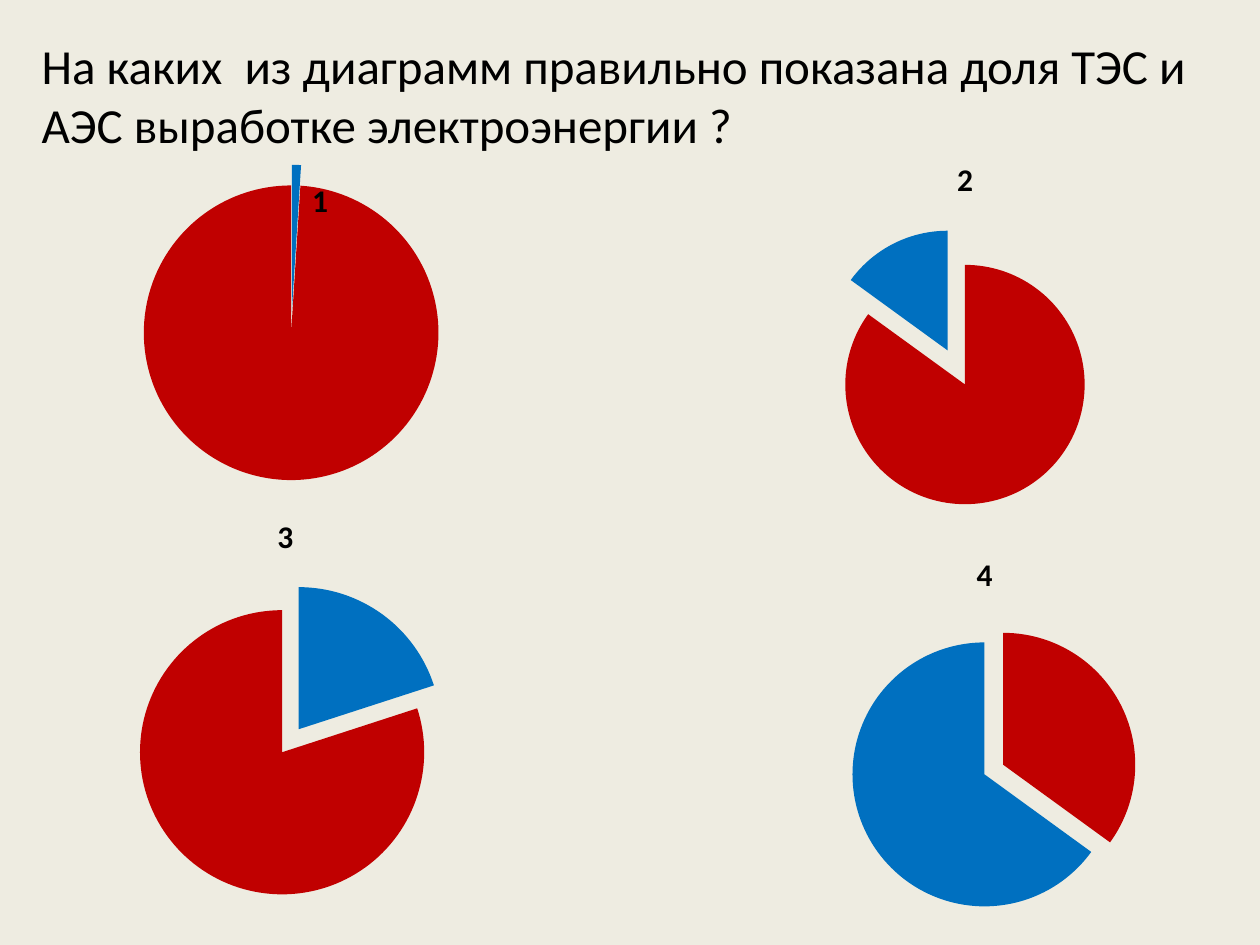
from lxml import etree
from pptx import Presentation
from pptx.chart.data import CategoryChartData
from pptx.dml.color import RGBColor
from pptx.enum.chart import XL_CHART_TYPE
from pptx.enum.text import MSO_ANCHOR, MSO_AUTO_SIZE, PP_ALIGN
from pptx.oxml.ns import qn
from pptx.util import Emu, Pt

PIE = XL_CHART_TYPE.PIE
TOP, LEFT, GROW = MSO_ANCHOR.TOP, PP_ALIGN.LEFT, MSO_AUTO_SIZE.SHAPE_TO_FIT_TEXT
SCALE = 914400 / 126  # EMU per px


class Theme:
    font = "Calibri"
    back = RGBColor.from_string("EEECE1")
    ink = RGBColor.from_string("000000")
    blue = RGBColor.from_string("0070C0")
    red = RGBColor.from_string("C00000")
    head = Pt(28)
    label = Pt(18)


TITLE = "На каких  из диаграмм правильно показана доля ТЭС и АЭС выработке электроэнергии ?"
CATS = ["1", "2", "3", "4"]

# Each pie: title, series name, frame in px, slices (value, colour, explosion %)
PIES = [
    ("1", "Series 1", (0, 158, 640, 393),
     [(1, Theme.blue, 14), (99, Theme.red, 0)]),
    ("2", "2", (591, 137, 748, 423),
     [(85, Theme.red, 0), (15, Theme.blue, 32)]),
    ("3", "Series 1", (-49, 493, 669, 437),
     [(20, Theme.blue, 16), (80, Theme.red, 4)]),
    ("4", "Series 1", (709, 532, 551, 413),
     [(35, Theme.red, 16), (65, Theme.blue, 0)]),
]
# Fixed inner plot area, as shares of the chart frame
PLOTS = {"1": {"x": 0.22, "y": 0.07, "w": 0.47, "h": 0.75}}


def px(*sizes):
    return [Emu(round(size * SCALE)) for size in sizes]


def style(font, size, **more):
    font.color.rgb = Theme.ink
    for key, val in {"name": Theme.font, "size": size, **more}.items():
        setattr(font, key, val)


def add_head(slide):
    head = slide.shapes.title
    head.left, head.top, head.width, head.height = px(29, 29, 1201, 131)
    frame = head.text_frame
    frame.text = TITLE
    for key, val in {"word_wrap": True, "auto_size": GROW,
                     "vertical_anchor": TOP}.items():
        setattr(frame, key, val)
    para = frame.paragraphs[0]
    para.alignment = LEFT
    style(para.runs[0].font, Theme.head)


def explode(series, index, share):
    for point in series._element.findall(qn("c:dPt")):
        mark = point.find(qn("c:idx"))
        if mark.get("val") == str(index):
            node = etree.Element(qn("c:explosion"), val=str(share))
            mark.addnext(node)


def fix_plot(chart, plot):
    area = chart._chartSpace.find(".//" + qn("c:plotArea"))
    layout = area.find(qn("c:layout"))
    if layout is None:
        layout = etree.Element(qn("c:layout"))
        area.insert(0, layout)
    manual = etree.SubElement(layout, qn("c:manualLayout"))
    rules = {"layoutTarget": "inner", "xMode": "edge", "yMode": "edge", **plot}
    for key, val in rules.items():
        etree.SubElement(manual, qn("c:" + key), val=str(val))


def add_pie(slide, title, name, box, parts):
    data = CategoryChartData()
    data.categories = CATS
    vals = [part[0] for part in parts]
    data.add_series(name, vals + [None] * (len(CATS) - len(vals)))
    chart = slide.shapes.add_chart(PIE, *px(*box), data).chart
    chart.has_legend = False
    style(chart.font, Theme.label)

    # Chart title
    chart.has_title = True
    frame = chart.chart_title.text_frame
    frame.text = title
    style(frame.paragraphs[0].runs[0].font, Theme.label, bold=True)

    # Slices
    plot = chart.plots[0]
    plot.vary_by_categories = True
    series = plot.series[0]
    for index, (_, color, share) in enumerate(parts):
        fill = series.points[index].format.fill
        fill.solid()
        fill.fore_color.rgb = color
        if share:
            explode(series, index, share)
    if title in PLOTS:
        fix_plot(chart, PLOTS[title])


def main():
    deck = Presentation()
    deck.slide_width, deck.slide_height = px(1260, 945)
    slide = deck.slides.add_slide(deck.slide_layouts[5])
    fill = slide.background.fill
    fill.solid()
    fill.fore_color.rgb = Theme.back
    add_head(slide)
    for pie in PIES:
        add_pie(slide, *pie)
    deck.save("out.pptx")


if __name__ == "__main__":
    main()
